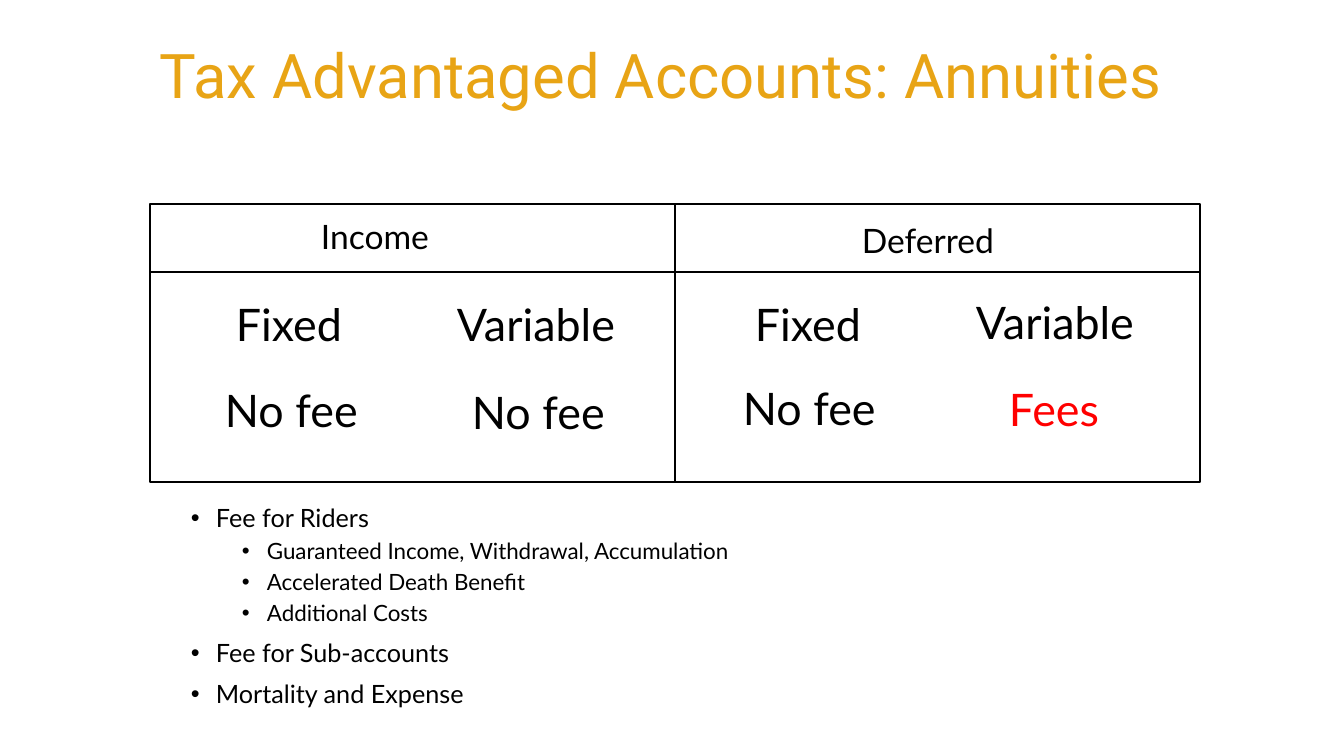
from dataclasses import dataclass

from lxml.etree import SubElement
from pptx import Presentation
from pptx.dml.color import RGBColor
from pptx.enum.shapes import MSO_CONNECTOR, MSO_SHAPE
from pptx.enum.text import MSO_ANCHOR
from pptx.oxml.ns import qn
from pptx.util import Emu, Pt

# Content: places in px
TITLE = "Tax Advantaged Accounts: Annuities"
TITLE_BOX = (150, 40, 1102, 146)

GRID = (150, 204, 1050, 278)
HEADER_HEIGHT = 68

HEADINGS = [  # text, left, top, width
    ("Income", 311, 211, 137),
    ("Deferred", 852, 215, 172),
]
ENTRIES = [  # text, left, top, width
    ("Fixed", 226, 292, 151),
    ("Variable", 447, 292, 206),
    ("No fee", 215, 378, 163),
    ("No fee", 462, 380, 163),
    ("Fixed", 745, 292, 151),
    ("Variable", 966, 290, 206),
    ("No fee", 733, 376, 163),
    ("Fees", 999, 377, 145),
]
HIGHLIGHTED = "Fees"

NOTES_BOX = (181, 501, 1102, 214)
NOTES = [  # level, text
    (0, "Fee for Riders"),
    (1, "Guaranteed Income, Withdrawal, Accumulation"),
    (1, "Accelerated Death Benefit"),
    (1, "Additional Costs"),
    (0, "Fee for Sub-accounts"),
    (0, "Mortality and Expense"),
]
NOTE_INDENTS = (25, 76)
NOTE_HANGING = 25


@dataclass(frozen=True)
class Theme:
    title_font: str = "Roboto"
    body_font: str = "Lato"
    gold: RGBColor = RGBColor(0xE8, 0xA4, 0x15)
    ink: RGBColor = RGBColor(0, 0, 0)
    paper: RGBColor = RGBColor(255, 255, 255)
    red: RGBColor = RGBColor(255, 0, 0)
    title_size: int = 44
    heading_size: int = 24
    entry_size: int = 32
    note_sizes: tuple = (18, 16)
    note_gaps: tuple = (10, 5)
    line_spacing: float = 0.9
    border: float = 1.5
    rule: float = 1


THEME = Theme()
EMU_PER_PX = 914400 / 100.8


def px(*lengths):
    return [Emu(round(length * EMU_PER_PX)) for length in lengths]


def add_frame(slide, box, wrap=True):
    frame = slide.shapes.add_textbox(*px(*box)).text_frame
    frame.word_wrap = wrap
    frame.vertical_anchor = MSO_ANCHOR.TOP
    return frame


def write(paragraph, text, size, color=THEME.ink, name=THEME.body_font):
    paragraph.text = text
    font = paragraph.font
    font.name, font.size = name, Pt(size)
    font.color.rgb = color


def add_bullet(paragraph, level):
    indent, hanging = px(NOTE_INDENTS[level], NOTE_HANGING)
    paragraph.level = level
    properties = paragraph._p.get_or_add_pPr()
    properties.set("marL", str(indent))
    properties.set("indent", str(-hanging))
    SubElement(properties, qn("a:buFont")).set("typeface", "Arial")
    SubElement(properties, qn("a:buChar")).set("char", "•")


def add_rule(slide, *ends):
    rule = slide.shapes.add_connector(MSO_CONNECTOR.STRAIGHT, *px(*ends))
    rule.line.color.rgb = THEME.ink
    rule.line.width = Pt(THEME.rule)
    SubElement(rule._element.spPr, qn("a:effectLst"))
    return rule


def main():
    presentation = Presentation()
    presentation.slide_width, presentation.slide_height = px(1344, 756)
    slide = presentation.slides.add_slide(presentation.slide_layouts[6])

    # Title
    title = add_frame(slide, TITLE_BOX).paragraphs[0]
    title.line_spacing = THEME.line_spacing
    write(title, TITLE, THEME.title_size, THEME.gold, THEME.title_font)

    # Notes on fees
    notes = add_frame(slide, NOTES_BOX)
    for index, (level, text) in enumerate(NOTES):
        note = notes.add_paragraph() if index else notes.paragraphs[0]
        add_bullet(note, level)
        note.line_spacing = THEME.line_spacing
        if index:
            note.space_before = Pt(THEME.note_gaps[level])
        write(note, text, THEME.note_sizes[level])

    # Grid with its two rules
    left, top, width, height = GRID
    grid = slide.shapes.add_shape(MSO_SHAPE.RECTANGLE, *px(*GRID))
    grid.shadow.inherit = False
    grid.fill.solid()
    grid.fill.fore_color.rgb = THEME.paper
    grid.line.color.rgb = THEME.ink
    grid.line.width = Pt(THEME.border)

    middle = left + width / 2
    divider = add_rule(slide, middle, top, middle, top + height)
    divider.begin_connect(grid, 0)
    divider.end_connect(grid, 2)
    header_bottom = top + HEADER_HEIGHT
    add_rule(slide, left, header_bottom, left + width, header_bottom)

    # Grid labels
    for labels, size, label_height in (
        (HEADINGS, THEME.heading_size, 50),
        (ENTRIES, THEME.entry_size, 65),
    ):
        for text, x, y, label_width in labels:
            frame = add_frame(slide, (x, y, label_width, label_height))
            color = THEME.red if text == HIGHLIGHTED else THEME.ink
            write(frame.paragraphs[0], text, size, color)

    presentation.save("out.pptx")


if __name__ == "__main__":
    main()
